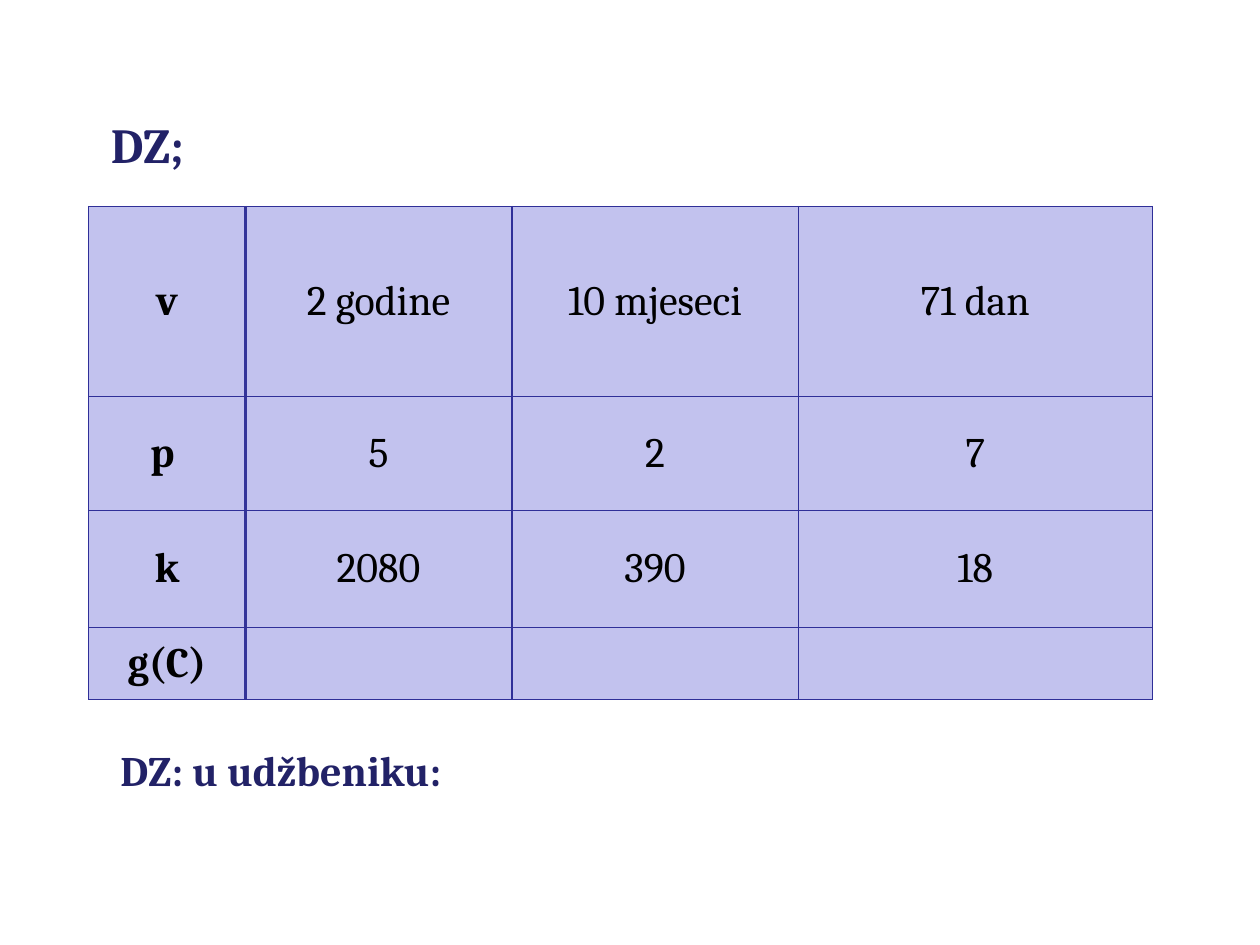
import pptx
import pptx.dml.color
import pptx.enum.text
import pptx.oxml
import pptx.oxml.ns
import pptx.util

Cm = pptx.util.Cm
Pt = pptx.util.Pt
ALIGN = pptx.enum.text.PP_ALIGN
ANCHOR = pptx.enum.text.MSO_ANCHOR

COLUMNS = (3.15, 5.38, 5.77, 7.14)
ROWS = (
    (3.84, ("v", "2 godine", "10 mjeseci", "71 dan")),
    (2.29, ("p ", "5", "2", "7")),
    (2.36, ("k", "2080", "390", "18")),
    (1.45, ("g(C)", "", "", "")),
)


def color(hex_value):
    return pptx.dml.color.RGBColor.from_string(hex_value)


class Homework:
    font = "Cambria"
    heading = "222267"
    ink = "000000"
    cell_fill = "C2C2EE"
    grid = ("2F2F98", 0.75)
    divider = ("333399", 2)

    def __init__(self, slide):
        self.slide = slide

    def run(self, p, text, size, hex_value, bold):
        r = p.add_run()
        r.text = text
        r.font.name = self.font
        r.font.size = Pt(size)
        r.font.bold = bold
        r.font.color.rgb = color(hex_value)

    def label(self, sp, text, size, left, top, width, height):
        """Place a one-line heading in a text box or placeholder."""
        sp.left, sp.top, sp.width, sp.height = map(Cm, (left, top, width, height))
        tf = sp.text_frame
        tf.word_wrap = False
        tf.auto_size = pptx.enum.text.MSO_AUTO_SIZE.SHAPE_TO_FIT_TEXT
        tf.vertical_anchor = ANCHOR.TOP
        p = tf.paragraphs[0]
        p.alignment = ALIGN.LEFT
        self.run(p, text, size, self.heading, True)

    def title(self, *args):
        self.label(self.slide.shapes.title, *args)

    def text(self, *args):
        self.label(self.slide.shapes.add_textbox(0, 0, 0, 0), *args)

    def border(self, cell, side, hex_value, width):
        cell._tc.get_or_add_tcPr().append(pptx.oxml.parse_xml(
            f'<a:ln{side} {pptx.oxml.ns.nsdecls("a")} w="{Pt(width)}">'
            f'<a:solidFill><a:srgbClr val="{hex_value}"/></a:solidFill>'
            f'</a:ln{side}>'))

    def cell(self, cell, text, col):
        cell.vertical_anchor = ANCHOR.MIDDLE
        cell.margin_left = cell.margin_right = Cm(0.2)
        cell.margin_top = cell.margin_bottom = Cm(0.1)
        for side in "LRTB":
            on_divider = (col, side) in ((0, "R"), (1, "L"))
            self.border(cell, side, *(self.divider if on_divider else self.grid))
        cell.fill.solid()
        cell.fill.fore_color.rgb = color(self.cell_fill)
        p = cell.text_frame.paragraphs[0]
        p.alignment = ALIGN.CENTER
        if text:
            self.run(p, text, 24, self.ink, col == 0)

    def table(self, left, top, columns, rows):
        height = sum(row_height for row_height, _ in rows)
        table = self.slide.shapes.add_table(
            len(rows), len(columns), Cm(left), Cm(top),
            Cm(sum(columns)), Cm(height)).table
        table.first_row = table.horz_banding = False
        for column, width in zip(table.columns, columns):
            column.width = Cm(width)
        for i, (row_height, texts) in enumerate(rows):
            table.rows[i].height = Cm(row_height)
            for j, text in enumerate(texts):
                self.cell(table.cell(i, j), text, j)


def main():
    prs = pptx.Presentation()
    prs.slide_width, prs.slide_height = Cm(25.4), Cm(19.05)
    s = Homework(prs.slides.add_slide(prs.slide_layouts[5]))
    s.title("DZ;", 28, 1.98, 2.18, 2.24, 1.45)
    s.table(1.79, 4.16, COLUMNS, ROWS)
    s.text("DZ: u udžbeniku:", 24, 2.18, 14.88, 8.74, 1.27)
    prs.save("out.pptx")


if __name__ == "__main__":
    main()
